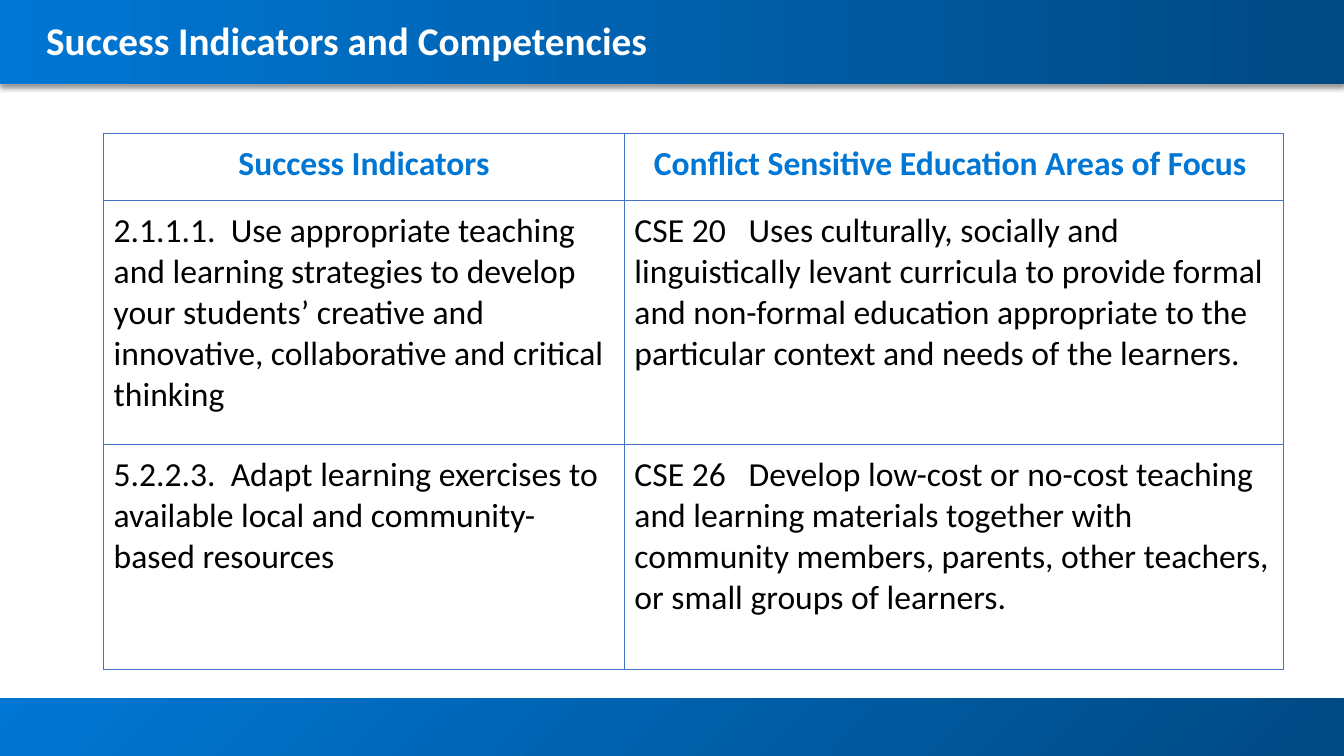
from lxml import etree
from pptx import Presentation
from pptx.dml.color import RGBColor
from pptx.enum.shapes import MSO_SHAPE
from pptx.enum.text import MSO_ANCHOR, MSO_AUTO_SIZE, PP_ALIGN
from pptx.oxml import parse_xml
from pptx.oxml.ns import nsdecls, qn
from pptx.util import Pt

RECTANGLE = MSO_SHAPE.RECTANGLE
MIDDLE = MSO_ANCHOR.MIDDLE
NO_AUTOFIT = MSO_AUTO_SIZE.NONE
CENTER, LEFT = PP_ALIGN.CENTER, PP_ALIGN.LEFT

BRIGHT_BLUE = RGBColor(0x00, 0x77, 0xD4)
DARK_BLUE = RGBColor(0x00, 0x49, 0x83)
GRID_BLUE = RGBColor(0x44, 0x72, 0xC4)
WHITE = RGBColor(0xFF, 0xFF, 0xFF)
BLACK = RGBColor(0x00, 0x00, 0x00)

WIDTH, HEIGHT = 960, 540
HEADER_HEIGHT, FOOTER_HEIGHT = 60, 41
COLUMN_WIDTHS = (372, 471)
ROW_HEIGHTS = (47.5, 174.5, 160.5)
INDICATORS = (
    ("Success Indicators", "Conflict Sensitive Education Areas of Focus "),
    ("2.1.1.1.  Use appropriate teaching and learning strategies to develop your "
     "students’ creative and innovative, collaborative and critical thinking ",
     "CSE 20   Uses culturally, socially and linguistically levant curricula to "
     "provide formal and non-formal education appropriate to the particular "
     "context and needs of the learners."),
    ("5.2.2.3.  Adapt learning exercises to available local and community-based "
     "resources",
     "CSE 26   Develop low-cost or no-cost teaching and learning materials "
     "together with community members, parents, other teachers, or small groups "
     "of learners."),
)


class SlideBuilder:
    font_name = "Calibri"

    def __init__(self, slide):
        self.slide = slide

    def style_text(self, paragraph, size, color, bold=False, align=LEFT):
        paragraph.alignment = align
        for run in paragraph.runs:
            run.font.name = self.font_name
            run.font.size = Pt(size)
            run.font.bold = bold
            run.font.color.rgb = color

    def gradient_bar(self, top, height, colors, angle):
        """Add a full-width bar; the angle runs counter-clockwise."""
        bar = self.slide.shapes.add_shape(
            RECTANGLE, Pt(0), Pt(top), Pt(WIDTH), Pt(height))
        bar.shadow.inherit = False
        bar.line.fill.background()
        bar.fill.gradient()
        bar.fill.gradient_angle = angle
        for stop, color in zip(bar.fill.gradient_stops, colors):
            stop.color.rgb = color
        return bar

    def drop_shadow(self, shape):
        effects = shape._element.spPr.find(qn("a:effectLst"))
        effects.append(parse_xml(
            f'<a:outerShdw {nsdecls("a")} blurRad="{Pt(4)}" dist="{Pt(3)}" '
            'dir="5400000" algn="t" rotWithShape="0"><a:srgbClr val="000000">'
            '<a:alpha val="40000"/></a:srgbClr></a:outerShdw>'))

    def title(self, text, left, top, width, height):
        heading = self.slide.shapes.title
        heading.left, heading.top = Pt(left), Pt(top)
        heading.width, heading.height = Pt(width), Pt(height)
        frame = heading.text_frame
        frame.text = text
        frame.word_wrap = True
        frame.auto_size = NO_AUTOFIT
        frame.vertical_anchor = MIDDLE
        frame.margin_left = frame.margin_right = Pt(0)
        frame.margin_top = frame.margin_bottom = Pt(0)
        frame.paragraphs[0].line_spacing = 0.99
        self.style_text(frame.paragraphs[0], 28, WHITE, bold=True)
        # Bring the title in front of the header bar
        self.slide.shapes._spTree.append(heading._element)

    def cell_borders(self, cell, color, width):
        properties = cell._tc.get_or_add_tcPr()
        for position, side in enumerate(("lnL", "lnR", "lnT", "lnB")):
            border = etree.Element(qn(f"a:{side}"), w=str(Pt(width)))
            fill = etree.SubElement(border, qn("a:solidFill"))
            etree.SubElement(fill, qn("a:srgbClr"), val=str(color))
            properties.insert(position, border)

    def table(self, rows, left, top, column_widths, row_heights):
        grid = self.slide.shapes.add_table(
            len(rows), len(column_widths), Pt(left), Pt(top),
            Pt(sum(column_widths)), Pt(sum(row_heights))).table
        grid.first_row = grid.horz_banding = False
        for column, width in zip(grid.columns, column_widths):
            column.width = Pt(width)
        for row, height, texts in zip(grid.rows, row_heights, rows):
            row.height = Pt(height)
            for cell, text in zip(row.cells, texts):
                cell.text_frame.text = text
                cell.margin_left = cell.margin_right = Pt(7.2)
                cell.margin_top = cell.margin_bottom = Pt(7.2)
                cell.fill.background()
                self.cell_borders(cell, GRID_BLUE, 0.75)
                paragraph = cell.text_frame.paragraphs[0]
                if texts is rows[0]:
                    self.style_text(paragraph, 24, BRIGHT_BLUE, True, CENTER)
                else:
                    self.style_text(paragraph, 24, BLACK)


def main():
    presentation = Presentation()
    presentation.slide_width, presentation.slide_height = Pt(WIDTH), Pt(HEIGHT)
    title_only = presentation.slide_layouts[5]
    builder = SlideBuilder(presentation.slides.add_slide(title_only))

    builder.gradient_bar(HEIGHT - FOOTER_HEIGHT, FOOTER_HEIGHT,
                         (DARK_BLUE, BRIGHT_BLUE), 135)
    header = builder.gradient_bar(0, HEADER_HEIGHT, (BRIGHT_BLUE, DARK_BLUE), 0)
    builder.drop_shadow(header)
    builder.title("Success Indicators and Competencies", 33, 12, 893.5, 36)
    builder.table(INDICATORS, 74, 95.5, COLUMN_WIDTHS, ROW_HEIGHTS)

    presentation.save("out.pptx")


if __name__ == "__main__":
    main()
